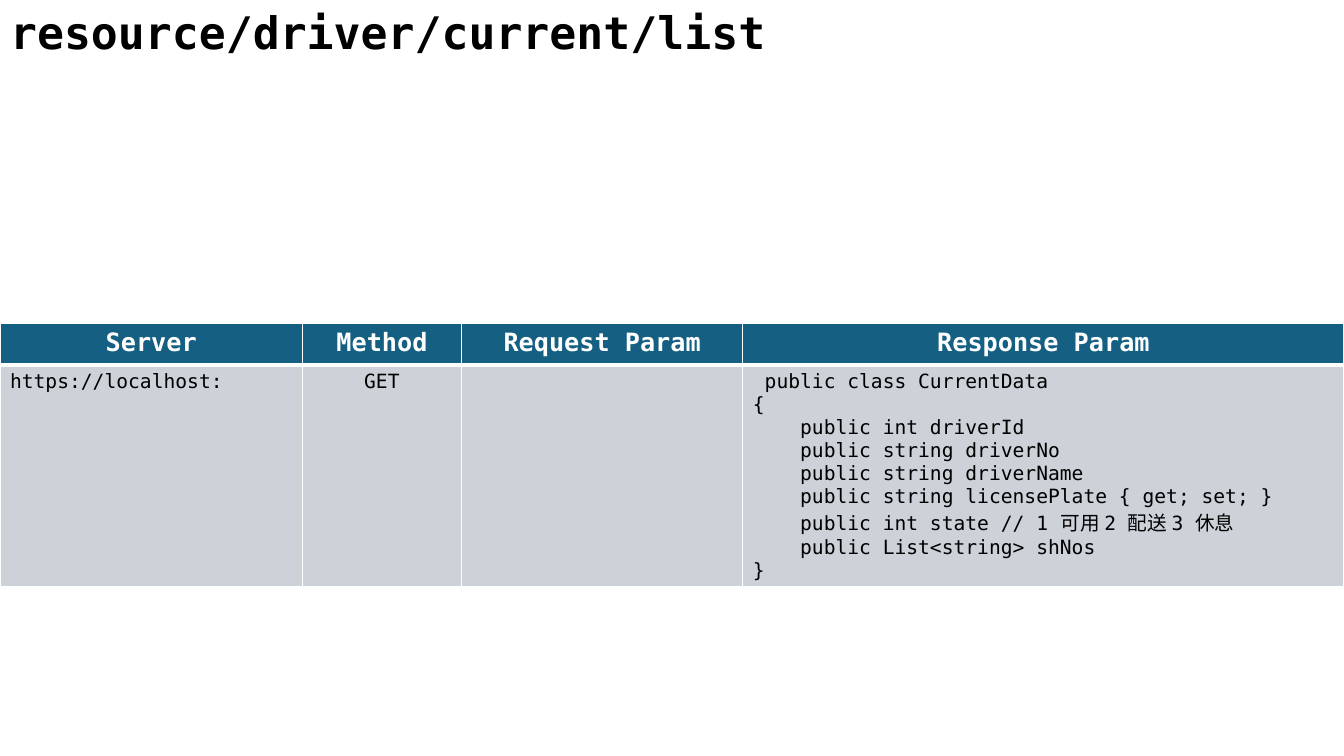
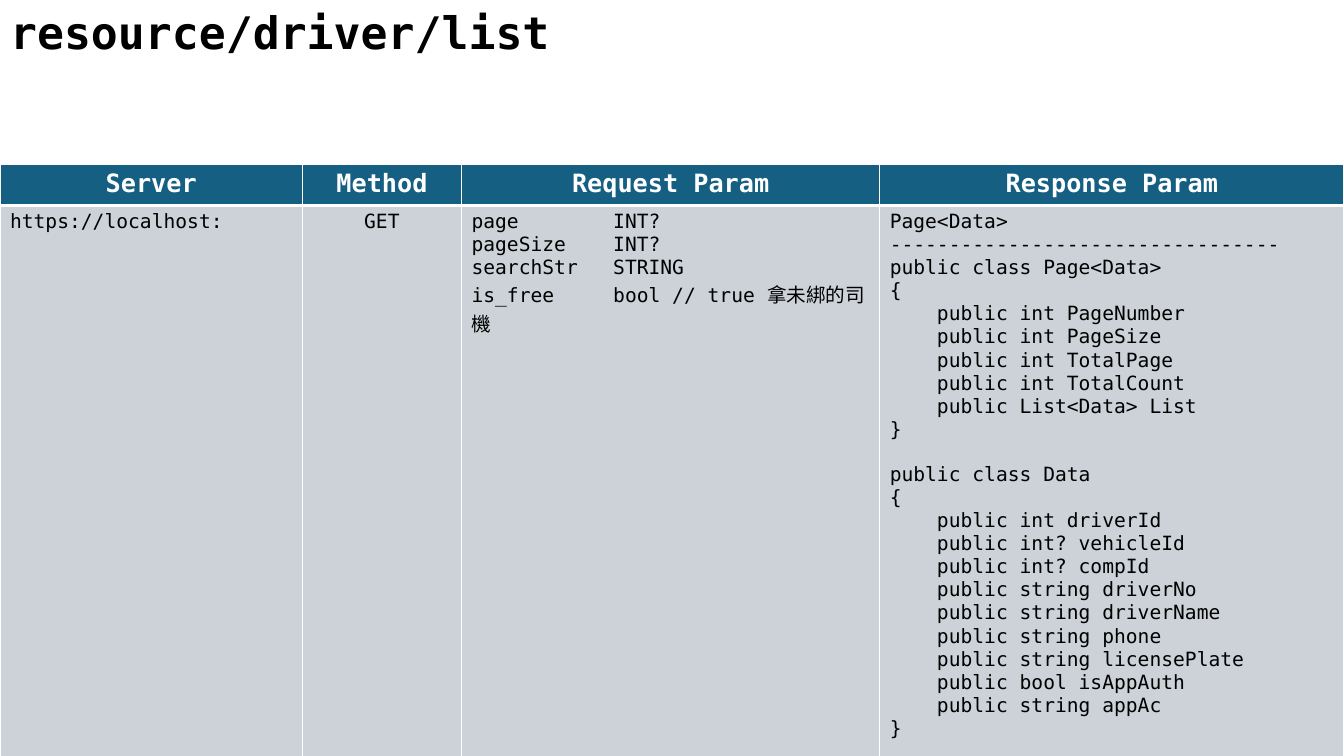
from pptx import Presentation, util as u
from pptx.dml.color import RGBColor
from pptx.enum import text
from pptx.oxml import parse_xml
from pptx.oxml.ns import nsdecls

SLIDE_WIDTH, SLIDE_HEIGHT = 33.87, 19.05
HEADER_HEIGHT = 1.04
SERVER_WIDTH, METHOD_WIDTH = 7.62, 4.01
TYPE_TAB = 3.57
CLASS_GAP = 16.3
HEADINGS = ["Server", "Method", "Request Param", "Response Param"]

CURRENT_DATA = """ public class CurrentData
{
    public int driverId
    public string driverNo
    public string driverName
    public string licensePlate { get; set; }
    public int state // 1 可用 2 配送 3 休息
    public List<string> shNos
}"""

LIST_REQUEST = """page\tINT?
pageSize\tINT?
searchStr\tSTRING
is_free\tbool // true 拿未綁的司機"""

PAGE_CLASS = """Page<Data>
---------------------------------
public class Page<Data>
{
    public int PageNumber
    public int PageSize
    public int TotalPage
    public int TotalCount
    public List<Data> List
}"""

DATA_CLASS = """public class Data
{
    public int driverId
    public int? vehicleId
    public int? compId
    public string driverNo
    public string driverName
    public string phone
    public string licensePlate
    public bool isAppAuth
    public string appAc
}"""


def color(value):
    return RGBColor.from_string(value)


class ApiDeck:
    """Holds the shared style and the slide being built."""

    FONT = "DejaVu Sans Mono"
    WHITE, BLACK, HEADER_FILL, BODY_FILL = "FFFFFF", "000000", "156082", "CCD2D8"
    TITLE = {"size": u.Pt(32), "bold": True, "color": BLACK}
    HEADER = {"size": u.Pt(18), "bold": True, "color": WHITE}
    BODY = {"size": u.Pt(14), "bold": False, "color": BLACK}

    def __init__(self):
        self.presentation = Presentation()
        self.presentation.slide_width = u.Cm(SLIDE_WIDTH)
        self.presentation.slide_height = u.Cm(SLIDE_HEIGHT)
        self.slide = None

    def format(self, paragraph, style, align):
        paragraph.alignment = align
        paragraph.font.name = self.FONT
        for name, value in style.items():
            if name == "color":
                paragraph.font.color.rgb = color(value)
            else:
                setattr(paragraph.font, name, value)

    def add_slide(self, title):
        layout = self.presentation.slide_layouts[5]
        self.slide = self.presentation.slides.add_slide(layout)
        shape = self.slide.shapes.title
        box = {"left": 0, "top": 0, "width": u.Cm(24), "height": u.Cm(1.62)}
        for name, value in box.items():
            setattr(shape, name, value)
        frame = shape.text_frame
        frame.text = title
        frame.word_wrap = True
        frame.auto_size = text.MSO_AUTO_SIZE.SHAPE_TO_FIT_TEXT
        frame.vertical_anchor = text.MSO_ANCHOR.TOP
        self.format(frame.paragraphs[0], self.TITLE, text.PP_ALIGN.LEFT)

    def add_borders(self, cell, widths):
        for side, width in widths.items():
            cell._tc.get_or_add_tcPr().append(parse_xml(
                f'<a:ln{side} {nsdecls("a")} w="{u.Pt(width)}"><a:solidFill>'
                f'<a:srgbClr val="{self.WHITE}"/></a:solidFill></a:ln{side}>'))

    def fill_cell(self, cell, blocks, style, fill, align, borders):
        """Write blocks of lines, with a gap before every block but the first."""
        self.add_borders(cell, borders)
        cell.fill.solid()
        cell.fill.fore_color.rgb = color(fill)
        cell.text = "\n".join(blocks)
        for paragraph in cell.text_frame.paragraphs:
            if "\t" in "".join(run.text for run in paragraph.runs):
                paragraph._p.get_or_add_pPr().append(parse_xml(
                    f'<a:tabLst {nsdecls("a")}>'
                    f'<a:tab pos="{u.Cm(TYPE_TAB)}" algn="l"/></a:tabLst>'))
            self.format(paragraph, style, align)
        start = 0
        for block in blocks[:-1]:
            start += len(block.split("\n"))
            cell.text_frame.paragraphs[start].space_before = u.Pt(CLASS_GAP)

    def add_endpoint_table(self, top, height, request_width, request, response):
        widths = [SERVER_WIDTH, METHOD_WIDTH, request_width]
        widths.append(SLIDE_WIDTH - sum(widths))
        table = self.slide.shapes.add_table(
            2, len(widths), 0, u.Cm(top), u.Cm(SLIDE_WIDTH), u.Cm(height)).table
        for column, width in zip(table.columns, widths):
            column.width = u.Cm(width)
        table.rows[0].height = u.Cm(HEADER_HEIGHT)
        table.rows[1].height = u.Cm(height - HEADER_HEIGHT)

        # Header row, with a thick rule below it
        center, left = text.PP_ALIGN.CENTER, text.PP_ALIGN.LEFT
        for index, heading in enumerate(HEADINGS):
            self.fill_cell(table.cell(0, index), [heading], self.HEADER,
                           self.HEADER_FILL, center,
                           {"L": 1, "R": 1, "T": 1, "B": 3})

        # Endpoint row
        values = [["https://localhost:"], ["GET"], request, response]
        for index, blocks in enumerate(values):
            self.fill_cell(table.cell(1, index), blocks, self.BODY,
                           self.BODY_FILL, center if index == 1 else left,
                           {"L": 1, "R": 1, "T": 3, "B": 1})


def main():
    deck = ApiDeck()

    # Current drivers
    deck.add_slide("resource/driver/current/list")
    deck.add_endpoint_table(8.15, 6.63, 7.09, [""], [CURRENT_DATA])

    # All drivers, by page
    deck.add_slide("resource/driver/list")
    deck.add_endpoint_table(4.14, 14.91, 10.54, [LIST_REQUEST],
                            [PAGE_CLASS, DATA_CLASS])

    deck.presentation.save("out.pptx")


if __name__ == "__main__":
    main()
